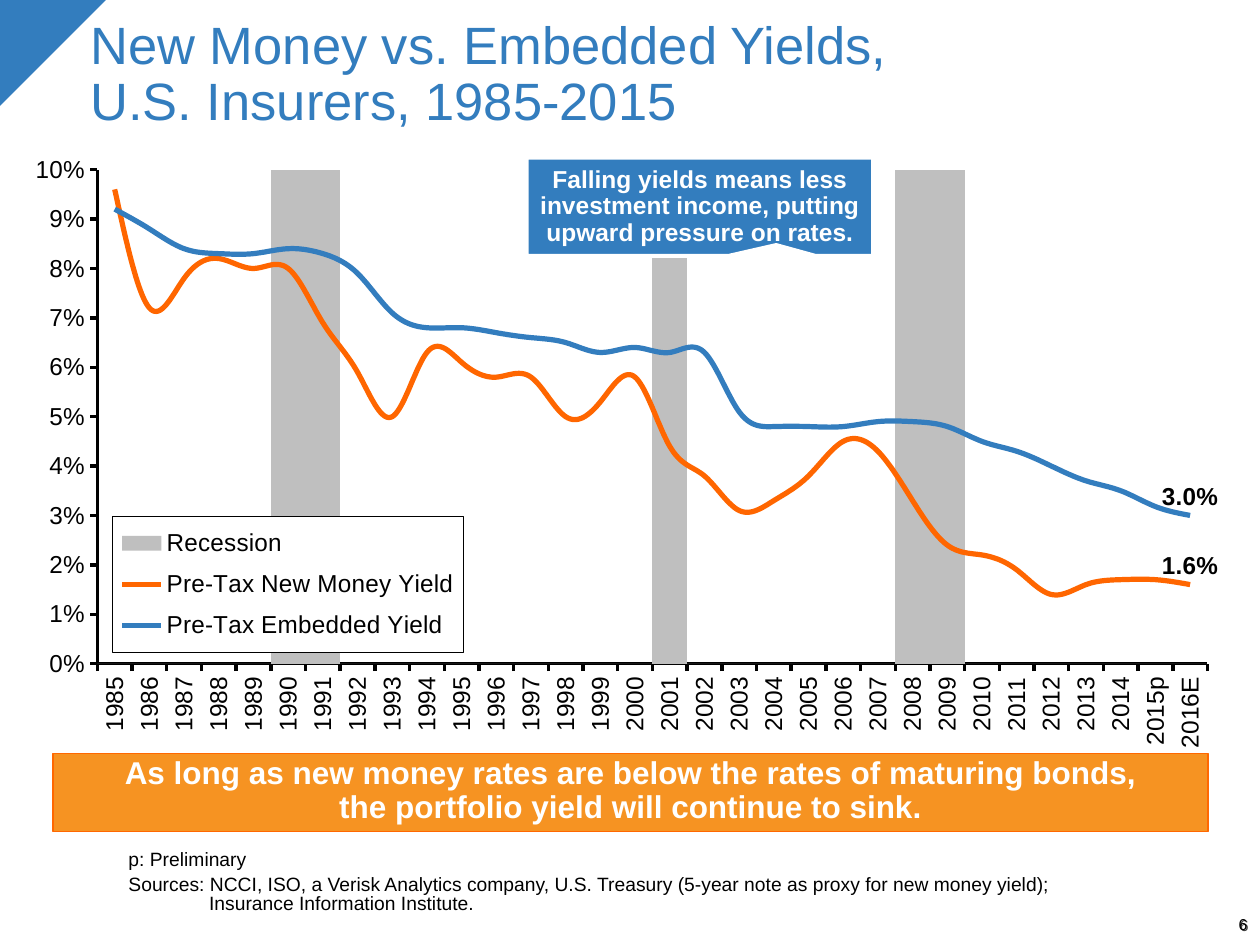
from lxml import etree
from pptx import Presentation
from pptx.chart.data import CategoryChartData
from pptx.dml.color import RGBColor
from pptx.enum.chart import (
    XL_CHART_TYPE, XL_LABEL_POSITION, XL_LEGEND_POSITION, XL_MARKER_STYLE, XL_TICK_MARK)
from pptx.enum.shapes import MSO_SHAPE
from pptx.enum.text import MSO_ANCHOR, PP_ALIGN
from pptx.oxml import parse_xml
from pptx.oxml.ns import qn
from pptx.util import Emu, Inches, Pt

COLUMNS = XL_CHART_TYPE.COLUMN_CLUSTERED
ABOVE = XL_LABEL_POSITION.ABOVE
LEGEND_RIGHT = XL_LEGEND_POSITION.RIGHT
NO_MARKER = XL_MARKER_STYLE.NONE
TICK_OUT, TICK_NONE = XL_TICK_MARK.OUTSIDE, XL_TICK_MARK.NONE
TRIANGLE, CALLOUT, RECTANGLE = (
    MSO_SHAPE.RIGHT_TRIANGLE, MSO_SHAPE.RECTANGULAR_CALLOUT, MSO_SHAPE.RECTANGLE)
TOP, MIDDLE, BOTTOM = MSO_ANCHOR.TOP, MSO_ANCHOR.MIDDLE, MSO_ANCHOR.BOTTOM
LEFT, CENTER, RIGHT = PP_ALIGN.LEFT, PP_ALIGN.CENTER, PP_ALIGN.RIGHT

FONT = "Arial"
HEX = {"blue": "337DBE", "orange": "FF6600", "banner": "F69322", "banner edge": "FF6801",
       "recession": "BFBFBF", "black": "000000", "grey": "404040", "white": "FFFFFF"}
COLOR = {name: RGBColor.from_string(value) for name, value in HEX.items()}

prs = Presentation()
prs.slide_width, prs.slide_height = Inches(10), Inches(7.5)
slide = prs.slides.add_slide(prs.slide_layouts[6])


def area(left, top, width, height):
    """Turn percentages of the slide's width and height into lengths."""
    across, down = prs.slide_width / 100, prs.slide_height / 100
    return [Emu(round(v)) for v in (left * across, top * down, width * across, height * down)]


def write(shape, lines, size, color, align, anchor, insets, spacing=0.9, bold=False):
    frame = shape.text_frame
    frame.word_wrap = True
    frame.vertical_anchor = anchor
    (frame.margin_left, frame.margin_top,
     frame.margin_right, frame.margin_bottom) = [Inches(i) for i in insets]
    frame.text = "\n".join(lines)
    for paragraph in frame.paragraphs:
        paragraph.alignment = align
        paragraph.line_spacing = spacing
        font = paragraph.font
        font.name, font.size, font.bold = FONT, Pt(size), bold
        font.color.rgb = COLOR[color]


# Corner triangle
corner = slide.shapes.add_shape(TRIANGLE, *area(0, 0, 8.4, 11.2))
corner.rotation = 90
corner.shadow.inherit = False
corner.fill.solid()
corner.fill.fore_color.rgb = COLOR["blue"]
corner.line.fill.background()

# Page number, set twice with a slight offset
for place, color, anchor, spacing in (
        ((94.3, 97.2, 4.8, 1.73), "grey", BOTTOM, 0.9),
        ((94.1, 97.07, 4.9, 1.73), "black", TOP, 0.85)):
    write(slide.shapes.add_textbox(*area(*place)), ["6"], 9, color, RIGHT, anchor,
          (0, 0, 0, 0), spacing)

# Title
title = slide.shapes.add_textbox(*area(6.2, 2.13, 77.7, 12.53))
write(title, ["New Money vs. Embedded Yields,\vU.S. Insurers, 1985-2015"],
      30, "blue", LEFT, BOTTOM, (0.1, 0.05, 0.1, 0.05))

# Footnotes, the sources with a hanging indent
notes = slide.shapes.add_textbox(*area(6.2, 89.87, 95.4, 8.93))
write(notes, ["p: Preliminary",
              "Sources: NCCI, ISO, a Verisk Analytics company, U.S. Treasury "
              "(5-year note as proxy for new money yield);\vInsurance Information Institute."],
      11, "black", LEFT, BOTTOM, (0.4, 0, 0, 0.15), 0.85)
sources = notes.text_frame.paragraphs[1]
sources.space_before = Pt(2.75)
hanging = sources._p.get_or_add_pPr()
hanging.set("marL", str(Inches(0.64)))
hanging.set("indent", str(-Inches(0.64)))

# Chart data
years = [str(year) for year in range(1985, 2015)] + ["2015p", "2016E"]
recessions = {"1990", "1991", "2001", "2008", "2009"}
new_money = [9.6, 7.2, 7.8, 8.2, 8, 8, 6.9, 5.9, 5, 6.3, 6.1, 5.8, 5.8, 5, 5.3, 5.8,
             4.4, 3.8, 3.1, 3.3, 3.8, 4.5, 4.3, 3.3, 2.4, 2.2, 1.9, 1.4, 1.6, 1.7, 1.7, 1.6]
embedded = [9.2, 8.8, 8.4, 8.3, 8.3, 8.4, 8.3, 7.9, 7.1, 6.8, 6.8, 6.7, 6.6, 6.5, 6.3, 6.4,
            6.3, 6.3, 5.1, 4.8, 4.8, 4.8, 4.9, 4.9, 4.8, 4.5, 4.3, 4, 3.7, 3.5, 3.18, 3]
yields = CategoryChartData(number_format="0.0%")
yields.categories = years
yields.add_series("Recession", [int(year in recessions) for year in years])
for name, percents in (("Pre-Tax New Money Yield", new_money),
                       ("Pre-Tax Embedded Yield", embedded)):
    yields.add_series(name, [round(p / 100, 4) for p in percents])
chart = slide.shapes.add_chart(COLUMNS, *area(2.8, 15.07, 93.9, 68.8), yields).chart
chart.has_title = False
chart.font.name, chart.font.size = FONT, Pt(14)
chart.font.color.rgb = COLOR["black"]

# Move the two yields into a line plot on the same axes
plot_area = chart._chartSpace.find(".//" + qn("c:plotArea"))
bars = plot_area.find(qn("c:barChart"))
lines = etree.Element(qn("c:lineChart"))
etree.SubElement(lines, qn("c:grouping")).set("val", "standard")
for series in bars.findall(qn("c:ser"))[1:]:
    for bar_only in series.findall(qn("c:invertIfNegative")):
        series.remove(bar_only)
    lines.append(series)
etree.SubElement(lines, qn("c:marker")).set("val", "1")
for axis_id in bars.findall(qn("c:axId")):
    etree.SubElement(lines, qn("c:axId")).set("val", axis_id.get("val"))
bars.addnext(parse_xml(etree.tostring(lines)))

# Recession bars and yield lines
bar_plot, line_plot = chart.plots
bar_plot.gap_width = 0
for plot in (bar_plot, line_plot):
    plot.vary_by_categories = False
recession_fill = bar_plot.series[0].format.fill
recession_fill.solid()
recession_fill.fore_color.rgb = COLOR["recession"]
for series, color in zip(line_plot.series, ("orange", "blue")):
    series.smooth = True
    series.marker.style = NO_MARKER
    series.format.line.width = Pt(3)
    series.format.line.color.rgb = COLOR[color]
    label = series.points[len(years) - 1].data_label
    label.font.name, label.font.size, label.font.bold = FONT, Pt(14), True
    label.font.color.rgb = COLOR["black"]
    label.position = ABOVE

# Axes
for axis in (chart.category_axis, chart.value_axis):
    axis.has_major_gridlines = False
    axis.major_tick_mark, axis.minor_tick_mark = TICK_OUT, TICK_NONE
    axis.format.line.width = Pt(2)
    axis.format.line.color.rgb = COLOR["black"]
    axis.tick_labels.font.name, axis.tick_labels.font.size = FONT, Pt(14)
upright = chart.category_axis._element.find(".//" + qn("a:bodyPr"))
upright.set("rot", "-5400000")
upright.set("vert", "horz")
chart.value_axis.minimum_scale, chart.value_axis.maximum_scale = 0, 0.1
chart.value_axis.major_unit = 0.01
chart.value_axis.tick_labels.number_format = "0%"
chart.value_axis.tick_labels.number_format_is_linked = False

# Legend box
chart.has_legend = True
chart.legend.position = LEGEND_RIGHT
chart.legend.include_in_layout = True
chart.legend.font.name, chart.legend.font.size = FONT, Pt(14)
legend = chart.legend._element
legend.find(qn("c:txPr")).addprevious(parse_xml(
    '<c:spPr xmlns:c="http://schemas.openxmlformats.org/drawingml/2006/chart" '
    'xmlns:a="http://schemas.openxmlformats.org/drawingml/2006/main">'
    f'<a:solidFill><a:srgbClr val="{HEX["white"]}"/></a:solidFill>'
    f'<a:ln w="{Pt(0.75)}"><a:solidFill><a:srgbClr val="{HEX["black"]}"/></a:solidFill></a:ln>'
    '</c:spPr>'))

# Fixed places of plot and legend, in percent of the chart
for parent, position, target, percents in (
        (plot_area, 0, "inner", (5.4, 4.2, 94.7, 76)),
        (legend, 1, None, (6.6, 57.5, 29.9, 21))):
    for automatic in parent.findall(qn("c:layout")):
        parent.remove(automatic)
    layout = etree.Element(qn("c:layout"))
    manual = etree.SubElement(layout, qn("c:manualLayout"))
    settings = [("layoutTarget", target)] if target else []
    settings += [("xMode", "edge"), ("yMode", "edge")]
    settings += [(key, str(p / 100)) for key, p in zip("xywh", percents)]
    for key, value in settings:
        etree.SubElement(manual, qn("c:" + key)).set("val", value)
    parent.insert(position, layout)

# Callout and banner
for kind, place, fill, edge, weight, size, insets, message in (
        (CALLOUT, (41.8, 16.67, 27.5, 10.4), "blue", "white", 2.25, 14, (0.1, 0.1, 0.1, 0.1),
         "Falling yields means less investment income, putting upward pressure on rates."),
        (RECTANGLE, (4.2, 79.73, 91.7, 8.27), "banner", "banner edge", 1, 18,
         (0.1, 0.05, 0.1, 0.07),
         "As long as new money rates are below the rates of maturing bonds,\v"
         "the portfolio yield will continue to sink.")):
    box = slide.shapes.add_shape(kind, *area(*place))
    box.shadow.inherit = False
    box.fill.solid()
    box.fill.fore_color.rgb = COLOR[fill]
    box.line.color.rgb = COLOR[edge]
    box.line.width = Pt(weight)
    if kind == CALLOUT:
        box.adjustments[0], box.adjustments[1] = 0.22, 0.39
    write(box, [message], size, "white", CENTER, MIDDLE, insets, bold=True)

prs.save("out.pptx")
